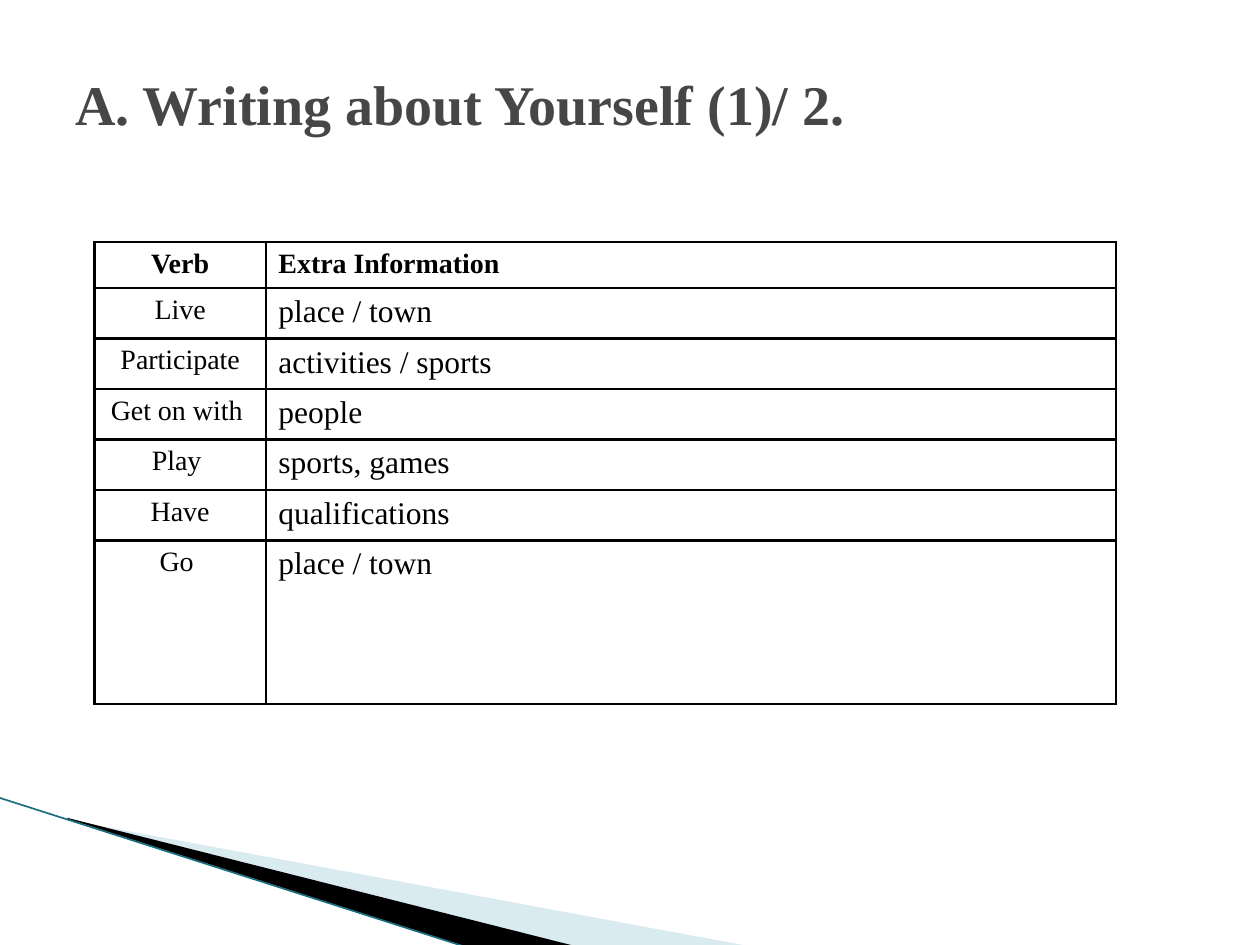
from lxml.etree import SubElement
from pptx import Presentation
from pptx.dml.color import RGBColor
from pptx.enum.text import MSO_ANCHOR, PP_ALIGN
from pptx.oxml.ns import qn
from pptx.util import Inches, Pt

TITLE = "A. Writing about Yourself (1)/ 2."
ROWS = [
    ("Verb", "Extra Information"),
    ("Live", "place / town"),
    ("Participate", "activities / sports"),
    ("Get on with ", "people"),
    ("Play ", "sports, games"),
    ("Have", "qualifications"),
    ("Go ", "place / town"),
]
COLS = [1.36, 6.75]
HEAD, BODY, LAST = 0.35, 0.38, 1.3
THEME = {
    "font": "Times New Roman",
    "title": "464646", "ink": "000000", "pale": "A0CBDC", "edge": "1A6E80",
    "title_size": 32, "verb_size": 16, "info_size": 18,
    "border": 1.5, "edge_width": 0.95,
}
# Corner points, colour, opacity in percent
WEDGES = [
    ([(0.55, 6.5), (0.55, 6.51), (5.95, 7.51), (4.56, 7.51)], "pale", 40),
    ([(0.53, 6.49), (4.57, 7.51), (3.72, 7.52), (0.54, 6.5)], "ink", 100),
]
EDGE = [(-0.01, 6.33), (3.71, 7.52)]


def rgb(name):
    return RGBColor.from_string(THEME[name])


def style(para, size, color, bold):
    for run in para.runs:
        font = run.font
        font.name, font.size, font.bold = THEME["font"], Pt(THEME[size]), bold
        font.color.rgb = rgb(color)


def add_wedge(shapes, points, color, alpha):
    spots = [(Inches(x), Inches(y)) for x, y in points]
    pen = shapes.build_freeform(*spots[0], scale=1.0)
    pen.add_line_segments(spots[1:], close=True)
    wedge = pen.convert_to_shape()
    wedge.shadow.inherit = False
    wedge.line.fill.background()
    wedge.fill.solid()
    wedge.fill.fore_color.rgb = rgb(color)
    if alpha < 100:
        tint = wedge.fill._xPr.find(".//" + qn("a:srgbClr"))
        SubElement(tint, qn("a:alpha"), val=str(alpha * 1000))


def add_edge(shapes):
    (x1, y1), (x2, y2) = EDGE
    edge = shapes.add_connector(1, Inches(x1), Inches(y1), Inches(x2), Inches(y2))
    edge.line.color.rgb = rgb("edge")
    edge.line.width = Pt(THEME["edge_width"])
    SubElement(edge._element.spPr, qn("a:effectLst"))


def add_title(shapes):
    box = shapes.add_textbox(Inches(0.5), Inches(0.3), Inches(9), Inches(1.03))
    frame = box.text_frame
    frame.word_wrap = True
    frame.vertical_anchor = MSO_ANCHOR.MIDDLE
    frame.text = TITLE
    style(frame.paragraphs[0], "title_size", "title", True)


def add_borders(cell):
    props = cell._tc.get_or_add_tcPr()
    for side in ("lnL", "lnR", "lnT", "lnB"):
        line = SubElement(props, qn("a:" + side), w=str(Pt(THEME["border"])))
        fill = SubElement(line, qn("a:solidFill"))
        SubElement(fill, qn("a:srgbClr"), val=THEME["ink"])


def add_grid(shapes):
    heights = [HEAD] + [BODY] * (len(ROWS) - 2) + [LAST]
    grid = shapes.add_table(
        len(ROWS), len(COLS), Inches(0.75), Inches(1.92),
        Inches(sum(COLS)), Inches(sum(heights))).table
    grid.first_row = grid.horz_banding = False
    for col, width in zip(grid.columns, COLS):
        col.width = Inches(width)
    for r, (row, texts) in enumerate(zip(grid.rows, ROWS)):
        row.height = Inches(heights[r])
        for c, text in enumerate(texts):
            cell = row.cells[c]
            add_borders(cell)
            cell.fill.background()
            cell.text_frame.text = text
            para = cell.text_frame.paragraphs[0]
            para.alignment = PP_ALIGN.LEFT if c else PP_ALIGN.CENTER
            size = "info_size" if r and c else "verb_size"
            style(para, size, "ink", r == 0)


def main():
    deck = Presentation()
    deck.slide_width, deck.slide_height = Inches(10), Inches(7.5)
    shapes = deck.slides.add_slide(deck.slide_layouts[6]).shapes
    for wedge in WEDGES:
        add_wedge(shapes, *wedge)
    add_edge(shapes)
    add_title(shapes)
    add_grid(shapes)
    deck.save("out.pptx")


if __name__ == "__main__":
    main()
